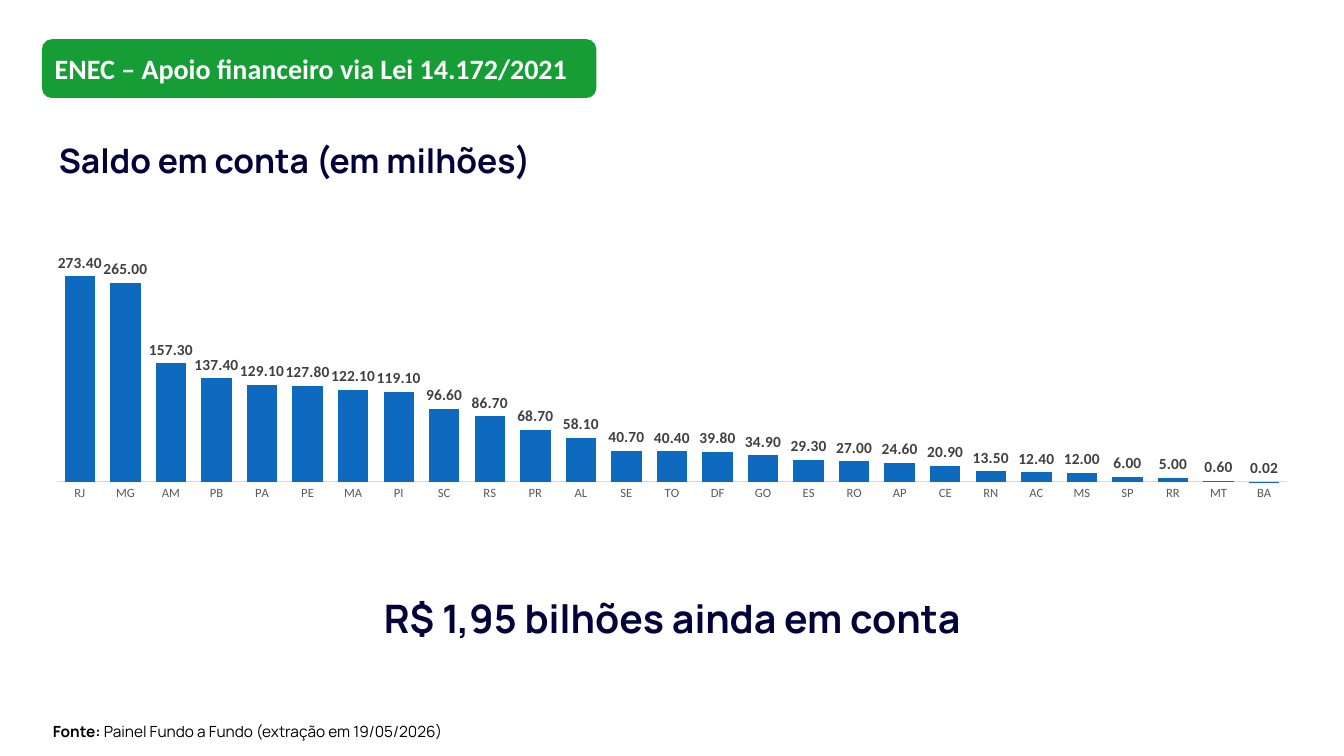
from pptx import Presentation
from pptx.chart.data import CategoryChartData
from pptx.dml.color import RGBColor
from pptx.enum import chart as charts, shapes, text
from pptx.util import Pt

NAVY = RGBColor(0x02, 0x03, 0x3B)
GREEN = RGBColor(0x16, 0x9D, 0x35)
BLUE = RGBColor(0x0D, 0x6A, 0xBF)
WHITE = RGBColor(0xFF, 0xFF, 0xFF)
BLACK = RGBColor(0, 0, 0)
LABEL_GREY = RGBColor(0x40, 0x40, 0x40)
AXIS_GREY = RGBColor(0x59, 0x59, 0x59)
LINE_GREY = RGBColor(0xD9, 0xD9, 0xD9)

BALANCES = {
    "RJ": 273.4, "MG": 265, "AM": 157.3, "PB": 137.4, "PA": 129.1, "PE": 127.8,
    "MA": 122.1, "PI": 119.1, "SC": 96.6, "RS": 86.7, "PR": 68.7, "AL": 58.1,
    "SE": 40.7, "TO": 40.4, "DF": 39.8, "GO": 34.9, "ES": 29.3, "RO": 27,
    "AP": 24.6, "CE": 20.9, "RN": 13.5, "AC": 12.4, "MS": 12, "SP": 6,
    "RR": 5, "MT": 0.6, "BA": 0.02,
}
NUMBER_FORMAT = "#,##0.00"


def style_font(font, name, size, color, bold=False):
    font.name = name
    font.size = Pt(size)
    font.color.rgb = color
    font.bold = bold


def add_banner(page, box, wording):
    banner = page.shapes.add_shape(shapes.MSO_SHAPE.ROUNDED_RECTANGLE, *map(Pt, box))
    banner.shadow.inherit = False
    banner.fill.solid()
    banner.fill.fore_color.rgb = GREEN
    banner.line.fill.background()
    frame = banner.text_frame
    frame.text = wording
    frame.vertical_anchor = text.MSO_ANCHOR.MIDDLE
    para = frame.paragraphs[0]
    para.alignment = text.PP_ALIGN.LEFT
    style_font(para.runs[0].font, "Calibri", 20, WHITE, True)


def add_text(page, box, spans, size, color, align):
    """Write one paragraph from (wording, bold) spans and return its frame."""
    frame = page.shapes.add_textbox(*map(Pt, box)).text_frame
    frame.word_wrap = True
    frame.auto_size = text.MSO_AUTO_SIZE.SHAPE_TO_FIT_TEXT
    para = frame.paragraphs[0]
    para.alignment = align
    for wording, bold in spans:
        span = para.add_run()
        span.text = wording
        style_font(span.font, "Manrope", size, color, bold)
    return frame


def add_heading(page, box, wording):
    frame = add_text(page, box, [(wording, True)], 24, NAVY, text.PP_ALIGN.JUSTIFY)
    frame.margin_left = frame.margin_right = frame.margin_top = frame.margin_bottom = 0
    frame.paragraphs[0].line_spacing = 1.06


def add_balance_chart(page, box):
    data = CategoryChartData(number_format=NUMBER_FORMAT)
    data.categories = list(BALANCES)
    data.add_series("Saldo", list(BALANCES.values()))
    chart = page.shapes.add_chart(
        charts.XL_CHART_TYPE.COLUMN_CLUSTERED, *map(Pt, box), data).chart
    chart.has_legend = False
    chart.has_title = False
    style_font(chart.font, "Calibri", 10, BLACK)

    # Axes
    states = chart.category_axis
    states.major_tick_mark = charts.XL_TICK_MARK.NONE
    states.format.line.color.rgb = LINE_GREY
    states.format.line.width = Pt(0.75)
    style_font(states.tick_labels.font, "Calibri", 9, AXIS_GREY)
    amounts = chart.value_axis
    amounts.visible = False
    amounts.has_major_gridlines = False
    amounts.minimum_scale = 0
    amounts.maximum_scale = 300

    # Columns and their labels
    plot = chart.plots[0]
    plot.gap_width = 50
    plot.overlap = -27
    plot.vary_by_categories = False
    series = plot.series[0]
    series.invert_if_negative = False
    series.format.fill.solid()
    series.format.fill.fore_color.rgb = BLUE
    labels = series.data_labels
    labels.show_value = True
    labels.position = charts.XL_LABEL_POSITION.OUTSIDE_END
    labels.number_format = NUMBER_FORMAT
    labels.number_format_is_linked = False
    style_font(labels.font, "Calibri", 11, LABEL_GREY, True)


def main():
    deck = Presentation()
    deck.slide_width, deck.slide_height = Pt(960), Pt(540)
    page = deck.slides.add_slide(deck.slide_layouts[6])
    center = text.PP_ALIGN.CENTER

    # Title and heading
    add_heading(page, (42, 98, 865, 31), "Saldo em conta (em milhões)")
    add_banner(page, (30, 28, 396, 42), "ENEC – Apoio financeiro via Lei 14.172/2021")

    # Balance by state
    add_balance_chart(page, (22.5, 179.5, 915, 181.5))

    # Total and source
    add_text(page, (259, 421, 442, 41), [("R$ 1,95 bilhões ainda em conta", True)],
             28, NAVY, center)
    add_text(page, (-44, 512, 442, 21),
             [("Fonte: ", True), ("Painel Fundo a Fundo (extração em 19/05/2026)", False)],
             11, BLACK, center)

    deck.save("out.pptx")


if __name__ == "__main__":
    main()
